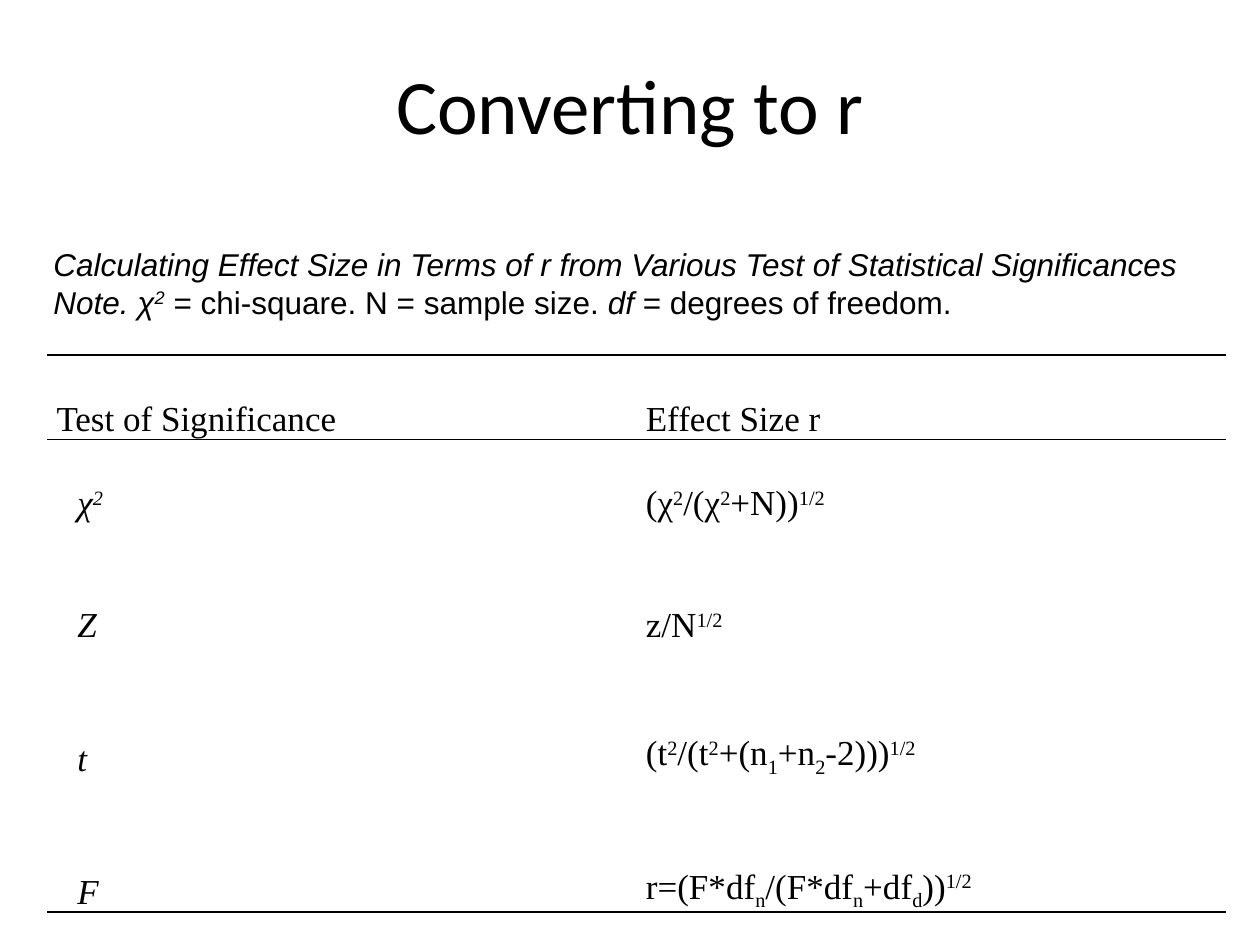
from lxml.etree import SubElement
from pptx import Presentation
from pptx.dml.color import RGBColor
from pptx.enum.text import MSO_ANCHOR as Anchor, MSO_AUTO_SIZE as AutoSize, PP_ALIGN as Align
from pptx.oxml.ns import qn
from pptx.util import Pt

COLORS = {"ink": "000000"}
BASELINES = {"^": "30000", "_": "-25000"}
INDENT = 12
ROW_HEIGHT, GAP_HEIGHT = 35.3, 15.1

TITLE_FONT = {"name": "Calibri", "size": Pt(44)}
CAPTION_FONT = {"name": "Arial", "size": Pt(18)}
TABLE_FONT = {"name": "Times New Roman", "size": Pt(20)}
CELL_FORMAT = {"vertical_anchor": Anchor.BOTTOM, "margin_left": Pt(5.4),
               "margin_right": Pt(5.4), "margin_top": 0, "margin_bottom": 0}

CAPTION = [
    [("Calculating Effect Size in Terms of r from Various Test of Statistical Significances", "i")],
    [("Note. χ", "i"), ("2", "i^"), (" = chi-square. N = sample size. ", ""),
     ("df", "i"), (" = degrees of freedom.", "")],
]
HEADER = ([("Test of Significance", "")], [("Effect Size r", "")])
CONVERSIONS = [
    ([("χ", "i"), ("2", "i^")],
     [("(χ", ""), ("2", "^"), ("/(χ", ""), ("2", "^"), ("+N))", ""), ("1/2", "^")]),
    ([("Z", "i")], [("z/N", ""), ("1/2", "^")]),
    ([("t", "i")],
     [("(t", ""), ("2", "^"), ("/(t", ""), ("2", "^"), ("+(n", ""), ("1", "_"),
      ("+n", ""), ("2", "_"), ("-2)))", ""), ("1/2", "^")]),
    ([("F", "i")],
     [("r=(F*df", ""), ("n", "_"), ("/(F*df", ""), ("n", "_"), ("+df", ""),
      ("d", "_"), ("))", ""), ("1/2", "^")]),
]


def apply_format(target, values):
    for name, value in values.items():
        setattr(target, name, value)


def write_spans(para, spans, font, indent=0):
    if indent:
        props = para._p.get_or_add_pPr()
        props.set("marL", "0")
        props.set("indent", str(Pt(indent)))
    for text, marks in spans:
        span = para.add_run()
        span.text = text
        apply_format(span.font, {**font, "italic": "i" in marks})
        span.font.color.rgb = RGBColor.from_string(COLORS["ink"])
        for mark, baseline in BASELINES.items():
            if mark in marks:
                span._r.get_or_add_rPr().set("baseline", baseline)


def add_text(page, area, paragraphs, font, frame_format, align, indent=0):
    box = page.shapes.add_textbox(*map(Pt, area))
    frame = box.text_frame
    apply_format(frame, {"vertical_anchor": Anchor.MIDDLE, **frame_format})
    for index, spans in enumerate(paragraphs):
        para = frame.add_paragraph() if index else frame.paragraphs[0]
        para.alignment = align
        write_spans(para, spans, font, indent)


def add_title(page, area):
    add_text(page, area, [[("Converting to r", "")]], TITLE_FONT,
             {"word_wrap": True}, Align.CENTER)


def add_caption(page, area):
    add_text(page, area, CAPTION, CAPTION_FONT,
             {"word_wrap": False, "auto_size": AutoSize.SHAPE_TO_FIT_TEXT},
             Align.LEFT, INDENT)


def set_borders(cell, ruled_sides):
    props = cell._tc.get_or_add_tcPr()
    for side in "LRTB":
        line = SubElement(props, qn(f"a:ln{side}"), w=str(Pt(1)))
        if side in ruled_sides:
            fill = SubElement(line, qn("a:solidFill"))
            SubElement(fill, qn("a:srgbClr"), val=COLORS["ink"])
        else:
            SubElement(line, qn("a:noFill"))


def add_conversion_table(page, left, top, width):
    rows = [HEADER, CONVERSIONS[0]]
    for conversion in CONVERSIONS[1:]:
        rows += [([], []), conversion]
    heights = [ROW_HEIGHT if row[0] else GAP_HEIGHT for row in rows]
    area = (left, top, width, sum(heights))
    table = page.shapes.add_table(len(rows), 2, *map(Pt, area)).table
    apply_format(table, {"first_row": False, "horz_banding": False})
    for column in table.columns:
        column.width = Pt(width / 2)
    ruled = {0: "TB", 1: "T", len(rows) - 1: "B"}
    for row_index, (row, height) in enumerate(zip(rows, heights)):
        table.rows[row_index].height = Pt(height)
        for column_index, spans in enumerate(row):
            cell = table.cell(row_index, column_index)
            apply_format(cell, CELL_FORMAT)
            set_borders(cell, ruled.get(row_index, ""))
            cell.fill.background()
            para = cell.text_frame.paragraphs[0]
            if spans:
                para.line_spacing = 2.0
                symbol = row_index > 0 and column_index == 0
                write_spans(para, spans, TABLE_FONT, INDENT if symbol else 0)


def main():
    deck = Presentation()
    apply_format(deck, {"slide_width": Pt(720), "slide_height": Pt(540)})
    page = deck.slides.add_slide(deck.slide_layouts[6])
    add_title(page, (36, 14.4, 648, 90))
    add_conversion_table(page, 26.9, 203, 673.6)
    add_caption(page, (11.5, 136.1, 674.6, 51.1))
    deck.save("out.pptx")


if __name__ == "__main__":
    main()
